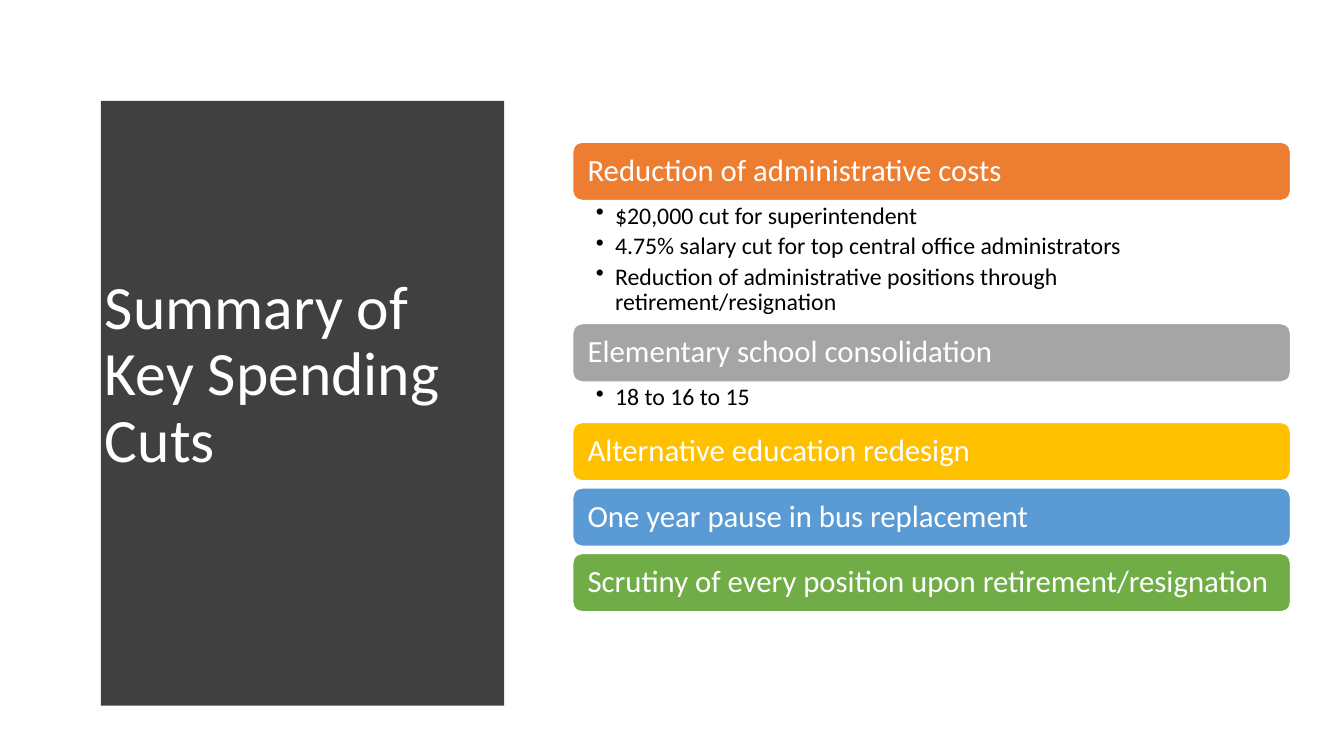
from lxml.etree import SubElement
from pptx import Presentation
from pptx.dml.color import RGBColor
from pptx.enum.shapes import MSO_SHAPE
from pptx.enum.text import MSO_ANCHOR, PP_ALIGN
from pptx.oxml.ns import qn
from pptx.util import Inches, Pt

COLORS = {
    "panel": "404040", "white": "FFFFFF", "black": "000000",
    "orange": "ED7D31", "gray": "A5A5A5", "gold": "FFC000",
    "blue": "5B9BD5", "green": "70AD47",
}
TITLE = "Summary of Key Spending Cuts"
CUTS = [
    ("Reduction of administrative costs", "orange", 1.22, [
        "$20,000 cut for superintendent",
        "4.75% salary cut for top central office administrators",
        "Reduction of administrative positions through retirement/resignation",
    ]),
    ("Elementary school consolidation", "gray", 0.4, ["18 to 16 to 15"]),
    ("Alternative education redesign", "gold", 0.07, []),
    ("One year pause in bus replacement", "blue", 0.07, []),
    ("Scrutiny of every position upon retirement/resignation", "green", 0, []),
]
HEADING_HEIGHT = 0.58
BULGE = 0.24
CURVE_STEPS = 48
CURVE_POWER = 2.4


def color(name):
    return RGBColor.from_string(COLORS[name])


def set_attributes(target, values):
    for name, value in values.items():
        setattr(target, name, value)


def format_frame(frame, anchor, insets):
    left, top, right, bottom = map(Inches, insets)
    set_attributes(frame, {
        "word_wrap": True, "vertical_anchor": anchor,
        "margin_left": left, "margin_top": top,
        "margin_right": right, "margin_bottom": bottom,
    })


def write_paragraph(paragraph, text, size, color_name, space_after=0):
    set_attributes(paragraph, {
        "text": text, "alignment": PP_ALIGN.LEFT, "line_spacing": 0.9,
        "space_before": Pt(0), "space_after": Pt(space_after),
    })
    set_attributes(paragraph.font, {"name": "Calibri", "size": Pt(size)})
    paragraph.font.color.rgb = color(color_name)


def add_bullet(paragraph):
    properties = paragraph._p.get_or_add_pPr()
    properties.set("marL", str(Inches(0.19)))
    properties.set("indent", str(Inches(-0.19)))
    SubElement(properties, qn("a:buChar"), char="•")


def add_title_panel(slide, left, top, width, height):
    middle = height / 2
    edge = []
    for step in range(CURVE_STEPS + 1):
        down = height * step / CURVE_STEPS
        distance = abs(down - middle) / middle
        edge.append((left + width - BULGE * distance ** CURVE_POWER, top + down))
    builder = slide.shapes.build_freeform(left, top, scale=Inches(1))
    builder.add_line_segments(edge + [(left, top + height)], close=True)
    panel = builder.convert_to_shape()
    panel.shadow.inherit = False
    panel.fill.solid()
    panel.fill.fore_color.rgb = color("panel")
    panel.line.fill.background()

    title = slide.shapes.title
    title._element.addprevious(panel._element)
    set_attributes(title, {
        "left": Inches(left + 0.41), "top": Inches(top + 0.59),
        "width": Inches(3.74), "height": Inches(5.24),
    })
    format_frame(title.text_frame, MSO_ANCHOR.MIDDLE, (0.1, 0.05, 0.1, 0.05))
    write_paragraph(title.text_frame.paragraphs[0], TITLE, 44, "white")


def add_heading(slide, text, fill, left, top, width):
    heading = slide.shapes.add_shape(
        MSO_SHAPE.ROUNDED_RECTANGLE, Inches(left), Inches(top),
        Inches(width), Inches(HEADING_HEIGHT))
    heading.shadow.inherit = False
    heading.fill.solid()
    heading.fill.fore_color.rgb = color(fill)
    heading.line.color.rgb = color("white")
    heading.line.width = Pt(1)
    format_frame(heading.text_frame, MSO_ANCHOR.MIDDLE, (0.12, 0.09, 0.09, 0.09))
    write_paragraph(heading.text_frame.paragraphs[0], text, 22, "white")


def add_details(slide, details, left, top, width, height):
    box = slide.shapes.add_textbox(
        Inches(left), Inches(top), Inches(width), Inches(height))
    frame = box.text_frame
    format_frame(frame, MSO_ANCHOR.TOP, (0.23, 0.03, 0.17, 0.03))
    for index, detail in enumerate(details):
        paragraph = frame.add_paragraph() if index else frame.paragraphs[0]
        write_paragraph(paragraph, detail, 17, "black", 3.4)
        add_bullet(paragraph)


def add_cuts_list(slide, left, top, width):
    for text, fill, space_below, details in CUTS:
        add_heading(slide, text, fill, left, top, width)
        top += HEADING_HEIGHT
        if details:
            add_details(slide, details, left, top, width, space_below)
        top += space_below


def main():
    presentation = Presentation()
    set_attributes(presentation, {
        "slide_width": Inches(13.33), "slide_height": Inches(7.5)})
    slide = presentation.slides.add_slide(presentation.slide_layouts[5])
    add_title_panel(slide, 0.53, 0.52, 4.79, 6.44)
    add_cuts_list(slide, 5.68, 1.41, 7.12)
    presentation.save("out.pptx")


if __name__ == "__main__":
    main()
